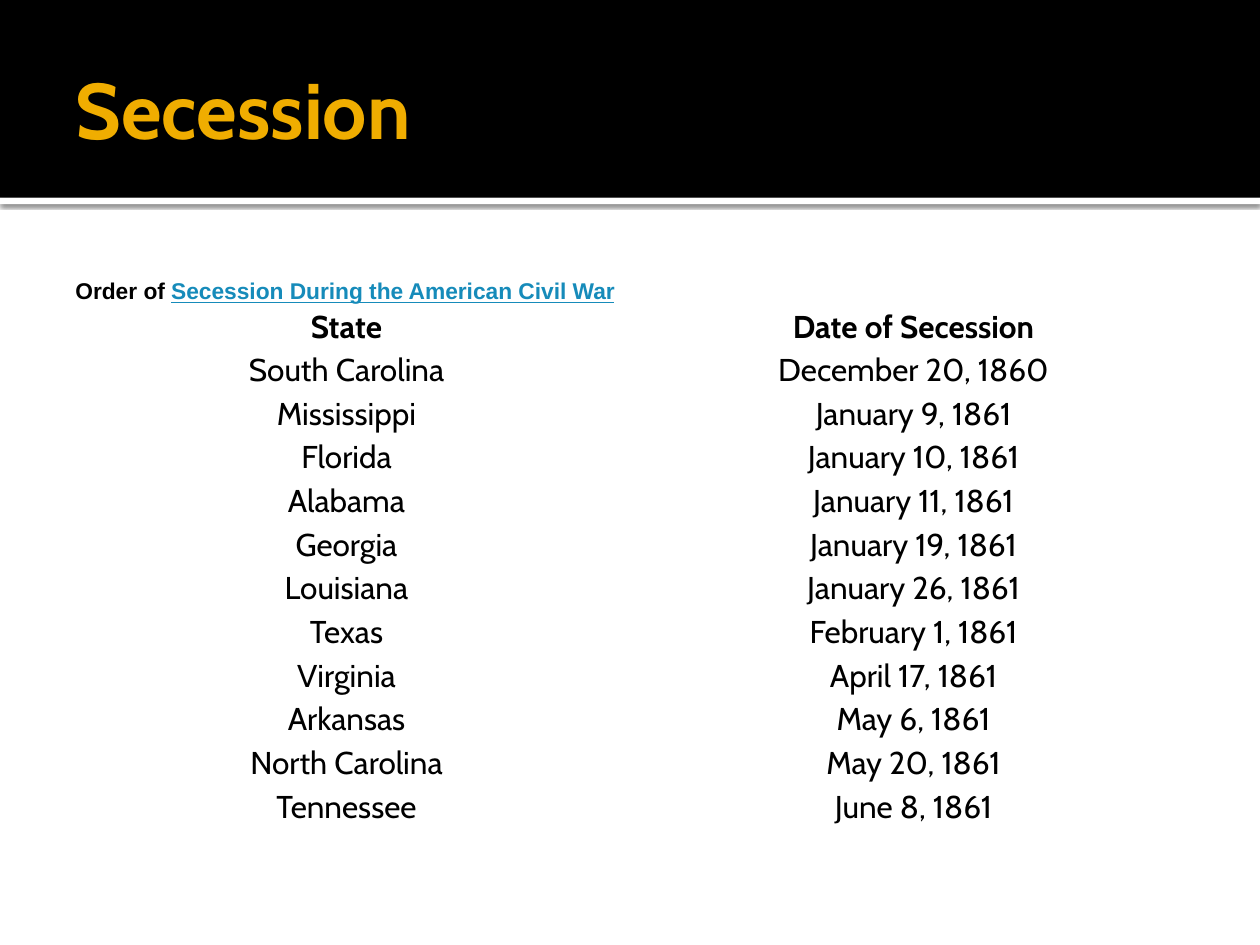
from lxml import etree
from pptx import Presentation
from pptx import util as u
from pptx.dml.color import RGBColor
from pptx.enum import shapes, text
from pptx.oxml import ns

BLACK = RGBColor(0x00, 0x00, 0x00)
WHITE = RGBColor(0xFF, 0xFF, 0xFF)
GOLD = RGBColor(0xF0, 0xAD, 0x00)
BLUE = RGBColor(0x16, 0x8B, 0xBA)

WIDE, HIGH = 10, 7.5
EDGE = WIDE * 0.05       # left and right margin
BAND = 1.57              # height of the title band
ROW = 4.16 / 12          # height of a table row

ROWS = [
    ("State", "Date of Secession"),
    ("South Carolina", "December 20, 1860"),
    ("Mississippi", "January 9, 1861"),
    ("Florida", "January 10, 1861"),
    ("Alabama", "January 11, 1861"),
    ("Georgia", "January 19, 1861"),
    ("Louisiana", "January 26, 1861"),
    ("Texas", "February 1, 1861"),
    ("Virginia", "April 17, 1861"),
    ("Arkansas", "May 6, 1861"),
    ("North Carolina", "May 20, 1861"),
    ("Tennessee", "June 8, 1861"),
]


def box(*sides):
    return [u.Inches(side) for side in sides]


def add_run(para, words, font, size, color, bold=False, line=False):
    run = para.add_run()
    run.text = words
    face = run.font
    face.name, face.size, face.bold = font, u.Pt(size), bold
    face.color.rgb = color
    if line:
        face.underline = True


def add_band(slide, top, high, color, layer):
    band = slide.shapes.add_shape(
        shapes.MSO_SHAPE.RECTANGLE, *box(0, top, WIDE, high))
    band.shadow.inherit = False
    band.fill.solid()
    band.fill.fore_color.rgb = color
    band.line.fill.background()
    # Bands lie behind the placeholders
    slide.shapes._spTree.insert(2 + layer, band._element)
    return band


def add_shade(shape):
    effects = shape._element.spPr.find(ns.qn("a:effectLst"))
    shade = etree.SubElement(
        effects, ns.qn("a:outerShdw"), blurRad=str(u.Pt(2.5)),
        dist=str(u.Pt(0.8)), dir="5400000", algn="t", rotWithShape="0")
    color = etree.SubElement(shade, ns.qn("a:srgbClr"), val=str(BLACK))
    etree.SubElement(color, ns.qn("a:alpha"), val="60000")


def set_title(slide, words):
    title = slide.shapes.title
    title.left, title.top, title.width, title.height = box(
        EDGE, 0.17, WIDE - 2 * EDGE, 1.37)
    frame = title.text_frame
    frame.vertical_anchor = text.MSO_ANCHOR.MIDDLE
    (frame.margin_left, frame.margin_top,
     frame.margin_right, frame.margin_bottom) = box(0.1, 0.05, 0.05, 0.05)
    para = frame.paragraphs[0]
    para.alignment = text.PP_ALIGN.LEFT
    add_run(para, words, "Cabin", 45, GOLD, bold=True)


def fill_cell(cell, words, bold):
    cell.fill.background()
    cell.vertical_anchor = text.MSO_ANCHOR.MIDDLE
    (cell.margin_left, cell.margin_top,
     cell.margin_right, cell.margin_bottom) = box(*[0.02] * 4)
    para = cell.text_frame.paragraphs[0]
    para.alignment = text.PP_ALIGN.CENTER
    add_run(para, words, "Cabin", 18, BLACK, bold)


def add_dates(slide):
    table = slide.shapes.add_table(
        len(ROWS), 2,
        *box(EDGE, 2.42, WIDE - 2 * EDGE, ROW * len(ROWS))).table
    table.horz_banding = False
    for r, row in enumerate(ROWS):
        table.rows[r].height = u.Inches(ROW)
        for c, words in enumerate(row):
            fill_cell(table.cell(r, c), words, bold=r == 0)


def add_lead(slide):
    frame = slide.shapes.add_textbox(*box(EDGE, 2.15, 9.75 - EDGE, 0.3)).text_frame
    frame.word_wrap = True
    para = frame.paragraphs[0]
    add_run(para, "Order of ", "Arial", 13, BLACK, bold=True)
    add_run(para, "Secession During the American Civil War",
            "Arial", 13, BLUE, bold=True, line=True)


def main():
    deck = Presentation()
    deck.slide_width, deck.slide_height = box(WIDE, HIGH)
    slide = deck.slides.add_slide(deck.slide_layouts[5])

    # Title band with a shaded white strip below it
    add_shade(add_band(slide, BAND, 0.05, WHITE, layer=0))
    add_band(slide, 0, BAND, BLACK, layer=1)
    set_title(slide, "Secession")

    # States and dates, with the lead line above
    add_dates(slide)
    add_lead(slide)
    deck.save("out.pptx")


if __name__ == "__main__":
    main()
